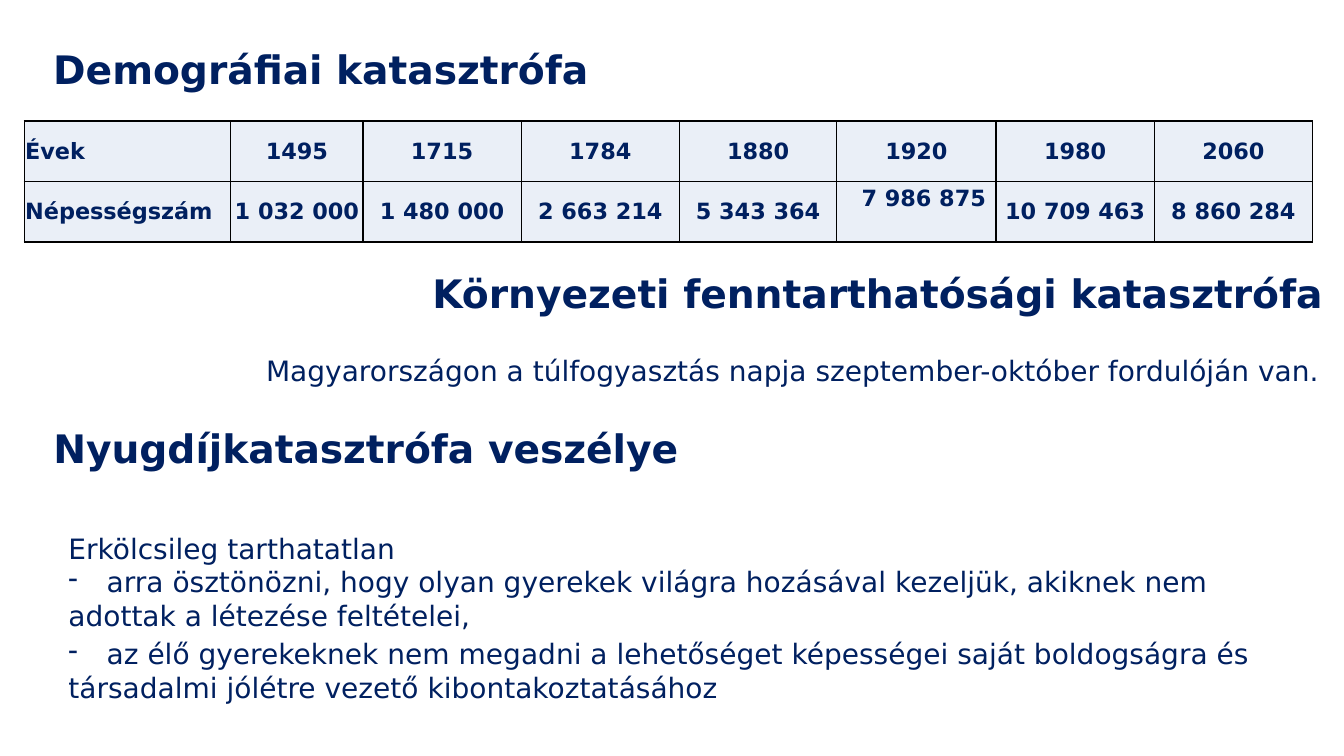
import dataclasses

import pptx
import pptx.dml.color
import pptx.enum.text
import pptx.oxml
import pptx.oxml.ns
import pptx.util

Inches = pptx.util.Inches
Align = pptx.enum.text.PP_ALIGN
Anchor = pptx.enum.text.MSO_ANCHOR


@dataclasses.dataclass(frozen=True)
class Theme:
    font: str = "DejaVu Sans"
    ink: str = "002060"
    cell: str = "EAEFF7"
    border: str = "000000"
    heading: int = 28
    body: int = 20
    table: int = 16


class SlideBuilder:
    def __init__(self, s, theme):
        self.s = s
        self.theme = theme

    def run(self, p, text, size, bold=False):
        r = p.add_run()
        r.text = text
        r.font.name = self.theme.font
        r.font.size = pptx.util.Pt(size)
        r.font.bold = bold
        r.font.color.rgb = pptx.dml.color.RGBColor.from_string(self.theme.ink)

    def dash(self, p):
        pPr = p._p.get_or_add_pPr()
        pPr.set("marL", str(Inches(0.38)))
        pPr.set("indent", str(Inches(-0.38)))
        bullet = pptx.oxml.parse_xml(
            f'<a:buChar {pptx.oxml.ns.nsdecls("a")} char="-"/>')
        pPr.append(bullet)

    def text_box(self, box, lines, size, bold=False, wrap=True):
        sp = self.s.shapes.add_textbox(*map(Inches, box))
        tf = sp.text_frame
        tf.word_wrap = wrap
        tf.auto_size = pptx.enum.text.MSO_AUTO_SIZE.SHAPE_TO_FIT_TEXT
        for i, (text, dashed) in enumerate(lines):
            p = tf.add_paragraph() if i else tf.paragraphs[0]
            if dashed:
                self.dash(p)
            self.run(p, text, size, bold)

    def heading(self, left, top, width, text):
        self.text_box((left, top, width, 0.57), [(text, False)],
                      self.theme.heading, bold=True)

    def body(self, box, lines):
        self.text_box(box, lines, self.theme.body, wrap=False)

    def cell(self, cell, text, align):
        tcPr = cell._tc.get_or_add_tcPr()
        for side in "LRTB":
            tcPr.append(pptx.oxml.parse_xml(
                f'<a:ln{side} {pptx.oxml.ns.nsdecls("a")} w="12700"><a:solidFill>'
                f'<a:srgbClr val="{self.theme.border}"/></a:solidFill></a:ln{side}>'))
        cell.fill.solid()
        cell.fill.fore_color.rgb = pptx.dml.color.RGBColor.from_string(self.theme.cell)
        cell.margin_left = cell.margin_right = cell.margin_top = Inches(0.01)
        cell.margin_bottom = 0
        cell.vertical_anchor = Anchor.MIDDLE
        p = cell.text_frame.paragraphs[0]
        p.alignment = align
        self.run(p, text, self.theme.table, bold=True)

    def table(self, left, top, widths, row_height, rows):
        frame = self.s.shapes.add_table(
            len(rows), len(widths), Inches(left), Inches(top),
            Inches(sum(widths)), Inches(row_height * len(rows)))
        table = frame.table
        table.first_row = table.horz_banding = False
        for column, width in zip(table.columns, widths):
            column.width = Inches(width)
        for i, row in enumerate(rows):
            table.rows[i].height = Inches(row_height)
            for j, text in enumerate(row):
                self.cell(table.cell(i, j), text, Align.CENTER if j else Align.LEFT)
        return table


def main():
    prs = pptx.Presentation()
    prs.slide_width, prs.slide_height = Inches(13.33), Inches(7.5)
    slide = SlideBuilder(prs.slides.add_slide(prs.slide_layouts[6]), Theme())

    slide.heading(0.43, 0.4, 6.33, "Demográfiai katasztrófa")
    slide.heading(4.19, 2.62, 9.64, "Környezeti fenntarthatósági katasztrófa")

    years = ["Évek", "1495", "1715", "1784", "1880", "1920", "1980", "2060"]
    population = ["Népességszám", "1 032 000", "1 480 000", "2 663 214",
                  "5 343 364", "7 986 875", "10 709 463", "8 860 284"]
    widths = [2.05, 1.31, 1.57, 1.57, 1.56, 1.58, 1.57, 1.57]
    table = slide.table(0.24, 1.2, widths, 0.6, [years, population])
    raised = table.cell(1, years.index("1920"))
    raised.vertical_anchor = Anchor.TOP
    raised.margin_top, raised.margin_right = Inches(0.04), Inches(0.1)
    raised.text_frame.paragraphs[0].alignment = Align.RIGHT

    slide.body((2.54, 3.46, 10.68, 0.44), [
        ("Magyarországon a túlfogyasztás napja szeptember-október fordulóján van.", False)])
    slide.heading(0.43, 4.16, 6.68, "Nyugdíjkatasztrófa veszélye")
    slide.body((0.58, 5.22, 11.75, 1.11), [
        ("Erkölcsileg tarthatatlan", False),
        ("arra ösztönözni, hogy olyan gyerekek világra hozásával kezeljük, akiknek nem", True),
        ("adottak a létezése feltételei,", False)])
    slide.body((0.58, 6.27, 12.11, 0.77), [
        ("az élő gyerekeknek nem megadni a lehetőséget képességei saját boldogságra és", True),
        ("társadalmi jólétre vezető kibontakoztatásához", False)])

    prs.save("out.pptx")


if __name__ == "__main__":
    main()
